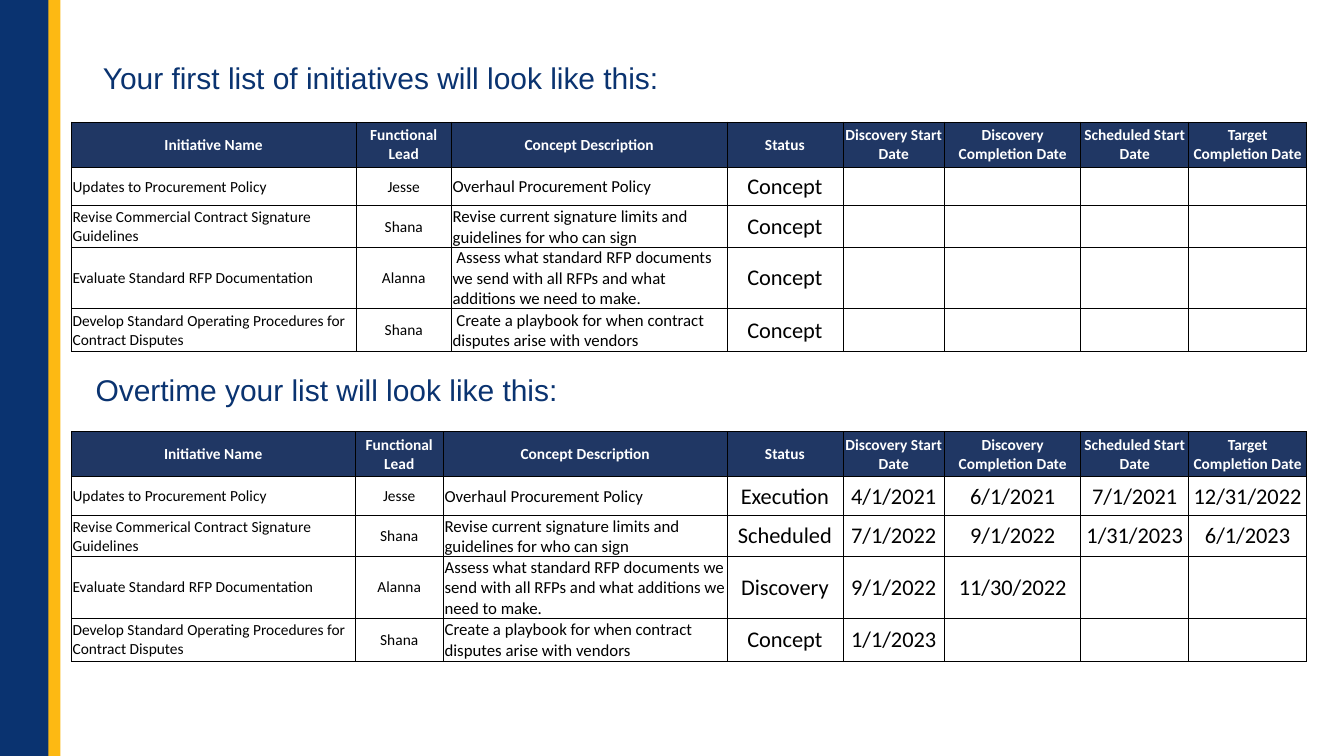
from dataclasses import dataclass

from lxml import etree
from pptx import Presentation
from pptx.dml.color import RGBColor
from pptx.enum import shapes, text
from pptx.oxml import ns
from pptx.util import Inches, Pt


@dataclass(frozen=True)
class Theme:
    navy: str = "0A3370"
    gold: str = "FDB913"
    header: str = "203764"
    white: str = "FFFFFF"
    black: str = "000000"
    heading_font: str = "Arial"
    table_font: str = "Calibri"
    heading: float = 21.4
    label: float = 11
    description: float = 12
    status: float = 16
    border: float = 0.5


THEME = Theme()

HEADERS = ["Initiative Name", "Functional Lead", "Concept Description", "Status",
           "Discovery Start Date", "Discovery Completion Date",
           "Scheduled Start Date", "Target Completion Date"]
ROW_HEIGHTS = [0.45, 0.38, 0.38, 0.57, 0.43]
DATE_WIDTHS = [1.15, 1.01, 1.35, 1.07, 1.17]

FIRST_LIST = [
    ["Updates to Procurement Policy", "Jesse", "Overhaul Procurement Policy", "Concept"],
    ["Revise Commercial Contract Signature Guidelines", "Shana",
     "Revise current signature limits and guidelines for who can sign", "Concept"],
    ["Evaluate Standard RFP Documentation", "Alanna",
     " Assess what standard RFP documents we send with all RFPs and what "
     "additions we need to make.", "Concept"],
    ["Develop Standard Operating Procedures for Contract Disputes", "Shana",
     " Create a playbook for when contract disputes arise with vendors", "Concept"],
]
LATER_LIST = [
    ["Updates to Procurement Policy", "Jesse", "Overhaul Procurement Policy",
     "Execution", "4/1/2021", "6/1/2021", "7/1/2021", "12/31/2022"],
    ["Revise Commerical Contract Signature Guidelines", "Shana",
     "Revise current signature limits and guidelines for who can sign",
     "Scheduled", "7/1/2022", "9/1/2022", "1/31/2023", "6/1/2023"],
    ["Evaluate Standard RFP Documentation", "Alanna",
     "Assess what standard RFP documents we send with all RFPs and what "
     "additions we need to make.", "Discovery", "9/1/2022", "11/30/2022"],
    ["Develop Standard Operating Procedures for Contract Disputes", "Shana",
     "Create a playbook for when contract disputes arise with vendors",
     "Concept", "1/1/2023"],
]


def add_run(p, words, font, size, color, bold=False):
    r = p.add_run()
    r.text = words
    r.font.name = font
    r.font.size = Pt(size)
    r.font.bold = bold
    r.font.color.rgb = RGBColor.from_string(color)


def add_bar(s, left, width, color):
    sp = s.shapes.add_shape(shapes.MSO_SHAPE.RECTANGLE, Inches(left), 0,
                            Inches(width), Inches(7.5))
    sp.shadow.inherit = False
    sp.fill.solid()
    sp.fill.fore_color.rgb = RGBColor.from_string(color)
    sp.line.fill.background()


def set_heading(sp, left, top, words):
    sp.left, sp.top = Inches(left), Inches(top)
    sp.width, sp.height = Inches(6.3), Inches(0.46)
    tf = sp.text_frame
    tf.word_wrap = True
    tf.auto_size = text.MSO_AUTO_SIZE.SHAPE_TO_FIT_TEXT
    tf.vertical_anchor = text.MSO_ANCHOR.TOP
    p = tf.paragraphs[0]
    p.alignment = text.PP_ALIGN.LEFT
    add_run(p, words, THEME.heading_font, THEME.heading, THEME.navy)


def add_borders(cell):
    tc_pr = cell._tc.get_or_add_tcPr()
    for side in ("a:lnL", "a:lnR", "a:lnT", "a:lnB"):
        ln = etree.SubElement(tc_pr, ns.qn(side), w=str(int(Pt(THEME.border))))
        fill = etree.SubElement(ln, ns.qn("a:solidFill"))
        etree.SubElement(fill, ns.qn("a:srgbClr"), val=THEME.black)


def fill_cell(cell, words, column, is_header):
    cell.margin_left = cell.margin_right = cell.margin_top = Inches(0.01)
    cell.margin_bottom = 0
    cell.vertical_anchor = text.MSO_ANCHOR.MIDDLE
    add_borders(cell)
    if is_header:
        cell.fill.solid()
        cell.fill.fore_color.rgb = RGBColor.from_string(THEME.header)
    else:
        cell.fill.background()
    if not words:
        return
    # Names and descriptions read from the left, all else is centred
    is_left = column in (0, 2) and not is_header
    p = cell.text_frame.paragraphs[0]
    p.alignment = text.PP_ALIGN.LEFT if is_left else text.PP_ALIGN.CENTER
    if is_header or column < 2:
        size = THEME.label
    else:
        size = THEME.description if column == 2 else THEME.status
    color = THEME.white if is_header else THEME.black
    add_run(p, words, THEME.table_font, size, color, is_header)


def add_initiatives(s, top, first_widths, initiatives):
    widths = first_widths + DATE_WIDTHS
    rows = [HEADERS] + initiatives
    frame = s.shapes.add_table(len(rows), len(widths), Inches(0.71), Inches(top),
                               Inches(sum(widths)), Inches(sum(ROW_HEIGHTS)))
    table = frame.table
    table.first_row = table.horz_banding = False
    for column, width in zip(table.columns, widths):
        column.width = Inches(width)
    for i, (row, height) in enumerate(zip(rows, ROW_HEIGHTS)):
        table.rows[i].height = Inches(height)
        for j in range(len(widths)):
            words = row[j] if j < len(row) else ""
            fill_cell(table.cell(i, j), words, j, i == 0)


def main():
    prs = Presentation()
    prs.slide_width, prs.slide_height = Inches(13.33), Inches(7.5)
    s = prs.slides.add_slide(prs.slide_layouts[5])

    # Side bars
    add_bar(s, 0, 0.49, THEME.navy)
    add_bar(s, 0.48, 0.12, THEME.gold)

    # First list
    set_heading(s.shapes.title, 0.92, 0.54,
                "Your first list of initiatives will look like this:")
    add_initiatives(s, 1.21, [2.82, 0.95, 2.73], FIRST_LIST)

    # Later list
    set_heading(s.shapes.add_textbox(0, 0, 0, 0), 0.85, 3.64,
                "Overtime your list will look like this:")
    add_initiatives(s, 4.28, [2.81, 0.88, 2.81], LATER_LIST)

    prs.save("out.pptx")


if __name__ == "__main__":
    main()
